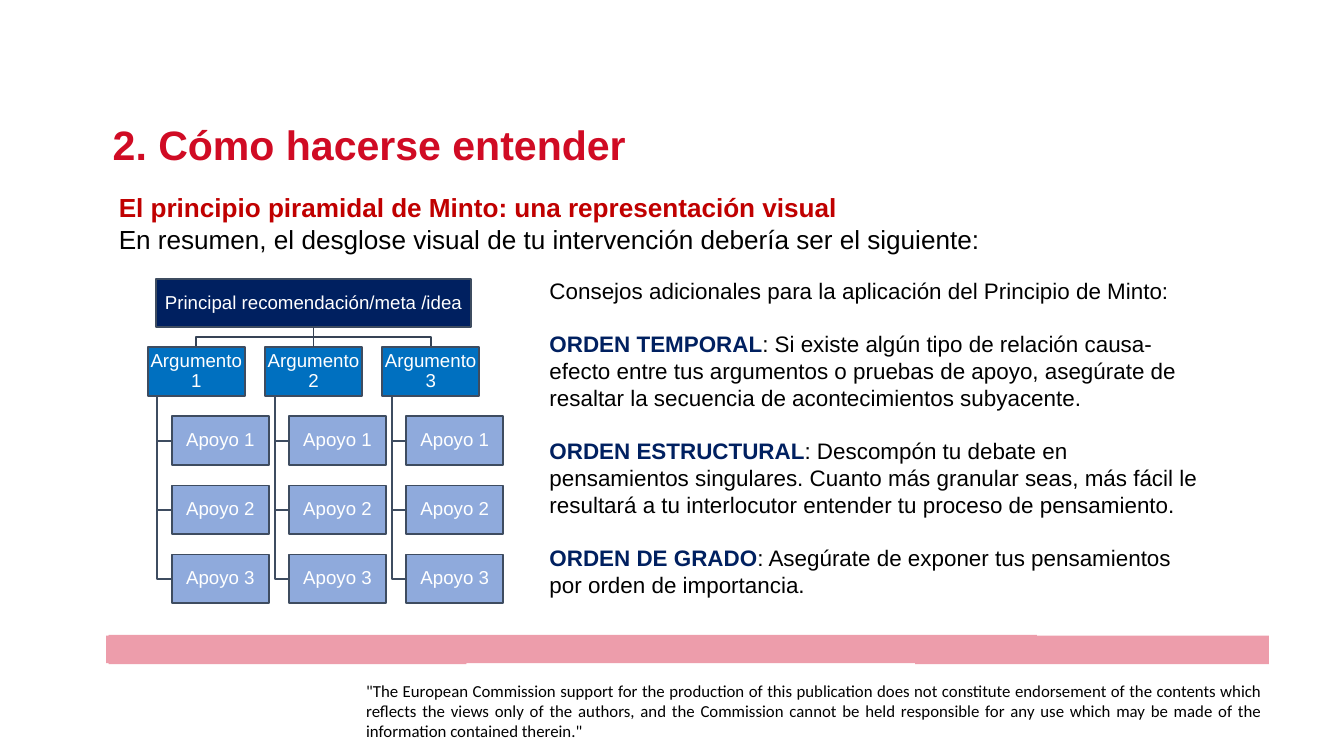
import pptx
import pptx.dml.color
import pptx.enum.shapes
import pptx.enum.text
import pptx.util
import lxml.etree

Cm = pptx.util.Cm
Pt = pptx.util.Pt
ALIGN = pptx.enum.text.PP_ALIGN
ANCHOR = pptx.enum.text.MSO_ANCHOR

RED, DARK_RED, PINK = "D00B24", "C00000", "ED9DAB"
NAVY, BLUE, LIGHT_BLUE = "002060", "0070C0", "8FAADC"
OUTLINE, ROOT_LINK = "3E4C60", "364355"
BLACK, WHITE = "000000", "FFFFFF"

BOX_WIDTH, BOX_HEIGHT = 3.66, 1.83
COLUMN_STEP, ROW_STEP = 4.43, 2.61
ROOT_LEFT, ROOT_TOP, ROOT_WIDTH = 5.89, 10.54, 11.92
ARGUMENT_LEFT, ARGUMENT_TOP = 5.59, 13.13
SUPPORT_INDENT, TRUNK_INDENT = 0.91, 0.36

BAND = [
    (47.96, 24.03), (39.19, 24.03), (39.19, 24), (4.11, 24), (4.11, 24.03),
    (4.01, 24.03), (4.01, 25.07), (4.11, 25.07), (4.11, 25.1), (17.63, 25.1),
    (17.63, 25.07), (34.59, 25.07), (34.59, 25.1), (47.96, 25.1),
]

DISCLAIMER = (
    '"The European Commission support for the production of this publication does not '
    "constitute endorsement of the contents which reflects the views only of the authors, "
    "and the Commission cannot be held responsible for any use which may be made of the "
    'information contained therein."'
)
ADVICE = [
    ("ORDEN TEMPORAL", ": Si existe algún tipo de relación causa-efecto entre tus argumentos "
     "o pruebas de apoyo, asegúrate de resaltar la secuencia de acontecimientos subyacente."),
    ("ORDEN ESTRUCTURAL", ": Descompón tu debate en pensamientos singulares. Cuanto más "
     "granular seas, más fácil le resultará a tu interlocutor entender tu proceso de "
     "pensamiento."),
    ("ORDEN DE GRADO", ": Asegúrate de exponer tus pensamientos por orden de importancia."),
]


def rgb(value):
    """Return the colour for a hex string."""
    return pptx.dml.color.RGBColor.from_string(value)


def add_span(para, text, size=24, color=BLACK, bold=False, font="Arial"):
    """Append formatted text to a paragraph."""
    span = para.add_run()
    span.text = text
    span.font.name = font
    span.font.size = Pt(size)
    span.font.bold = bold
    span.font.color.rgb = rgb(color)


def set_frame(frame, across, down, anchor=ANCHOR.TOP):
    """Set wrapping, margins and anchor of a text frame."""
    frame.word_wrap = True
    frame.margin_left = frame.margin_right = Cm(across)
    frame.margin_top = frame.margin_bottom = Cm(down)
    frame.vertical_anchor = anchor


def add_text_box(slide, left, top, width, height, across=0.25, down=0.13):
    """Add a wrapping text box and return its frame."""
    box = slide.shapes.add_textbox(Cm(left), Cm(top), Cm(width), Cm(height))
    set_frame(box.text_frame, across, down)
    return box.text_frame


def add_outline(slide, points, close=False):
    """Add a freeform through points given in centimetres."""
    corners = [(Cm(x), Cm(y)) for x, y in points]
    builder = slide.shapes.build_freeform(*corners[0])
    builder.add_line_segments(corners[1:], close=close)
    shape = builder.convert_to_shape()
    shape.shadow.inherit = False
    return shape


def add_band(slide):
    """Add the pink band above the disclaimer."""
    band = add_outline(slide, BAND, close=True)
    band.fill.solid()
    band.fill.fore_color.rgb = rgb(PINK)
    band.line.fill.background()


def add_branch(slide, points, color):
    """Add a bent line of the diagram."""
    branch = add_outline(slide, points)
    branch.fill.background()
    branch.line.color.rgb = rgb(color)
    branch.line.width = Pt(2)


def add_node(slide, text, left, top, fill, width=BOX_WIDTH):
    """Add a labelled rectangle of the diagram."""
    node = slide.shapes.add_shape(
        pptx.enum.shapes.MSO_SHAPE.RECTANGLE, Cm(left), Cm(top), Cm(width), Cm(BOX_HEIGHT))
    node.shadow.inherit = False
    node.fill.solid()
    node.fill.fore_color.rgb = rgb(fill)
    node.line.color.rgb = rgb(OUTLINE)
    node.line.width = Pt(2)
    set_frame(node.text_frame, 0.03, 0.03, ANCHOR.MIDDLE)
    para = node.text_frame.paragraphs[0]
    para.alignment = ALIGN.CENTER
    para.line_spacing = 0.9
    add_span(para, text, size=20, color=WHITE)
    return node


def add_link(slide, upper, lower):
    """Join the bottom of one node to the top of another."""
    link = slide.shapes.add_connector(pptx.enum.shapes.MSO_CONNECTOR.STRAIGHT, 0, 0, 0, 0)
    link.begin_connect(upper, 2)
    link.end_connect(lower, 0)
    link.line.color.rgb = rgb(ROOT_LINK)
    link.line.width = Pt(2)
    properties = link._element.spPr
    lxml.etree.SubElement(properties, pptx.oxml.ns.qn("a:effectLst"))


def add_argument(slide, number):
    """Add one argument with its three supports and return its node."""
    left = ARGUMENT_LEFT + (number - 1) * COLUMN_STEP
    trunk, support_left = left + TRUNK_INDENT, left + SUPPORT_INDENT
    for row in (1, 2, 3):
        top = ARGUMENT_TOP + row * ROW_STEP
        middle = top + BOX_HEIGHT / 2
        corners = [(trunk, ARGUMENT_TOP + BOX_HEIGHT), (trunk, middle), (support_left, middle)]
        add_branch(slide, corners, OUTLINE)
        add_node(slide, f"Apoyo {row}", support_left, top, LIGHT_BLUE)
    return add_node(slide, f"Argumento {number}", left, ARGUMENT_TOP, BLUE)


def add_pyramid(slide):
    """Add the main idea, its arguments and their supports."""
    center, root_bottom = ROOT_LEFT + ROOT_WIDTH / 2, ROOT_TOP + BOX_HEIGHT
    bend = (root_bottom + ARGUMENT_TOP) / 2
    for side in (-1, 1):
        x = center + side * COLUMN_STEP
        corners = [(center, root_bottom), (center, bend), (x, bend), (x, ARGUMENT_TOP)]
        add_branch(slide, corners, ROOT_LINK)
    root = add_node(
        slide, "Principal recomendación/meta /idea", ROOT_LEFT, ROOT_TOP, NAVY, ROOT_WIDTH)
    arguments = [add_argument(slide, number) for number in (1, 2, 3)]
    add_link(slide, root, arguments[1])


def add_advice(slide):
    """Add the advice on ordering the arguments."""
    frame = add_text_box(slide, 20.52, 10.36, 25.25, 12.57)
    add_span(frame.paragraphs[0],
             "Consejos adicionales para la aplicación del Principio de Minto:")
    for term, explanation in ADVICE:
        para = frame.add_paragraph()
        para.space_before = Pt(28)
        add_span(para, term, color=NAVY, bold=True)
        add_span(para, explanation)


def add_headings(slide):
    """Add the title and the introduction."""
    title = add_text_box(slide, 4.01, 4.37, 36.07, 2.13)
    add_span(title.paragraphs[0], "2. Cómo hacerse entender", size=44, color=RED, bold=True)
    intro = add_text_box(slide, 4.24, 7.11, 44.07, 3.84)
    add_span(intro.paragraphs[0], "El principio piramidal de Minto: una representación visual",
             size=28, color=DARK_RED, bold=True)
    add_span(intro.add_paragraph(),
             "En resumen, el desglose visual de tu intervención debería ser el siguiente:",
             size=28)


def add_disclaimer(slide):
    """Add the justified disclaimer at the foot."""
    para = add_text_box(slide, 13.84, 25.78, 33.86, 1.93, 0, 0).paragraphs[0]
    para.alignment = ALIGN.JUSTIFY
    para.line_spacing = 0.98
    add_span(para, DISCLAIMER, size=18, font="Calibri")


def main():
    """Build the slide and save the deck."""
    deck = pptx.Presentation()
    deck.slide_width, deck.slide_height = Cm(50.8), Cm(28.575)
    slide = deck.slides.add_slide(deck.slide_layouts[6])
    add_band(slide)
    add_disclaimer(slide)
    add_headings(slide)
    add_pyramid(slide)
    add_advice(slide)
    deck.save("out.pptx")


if __name__ == "__main__":
    main()
